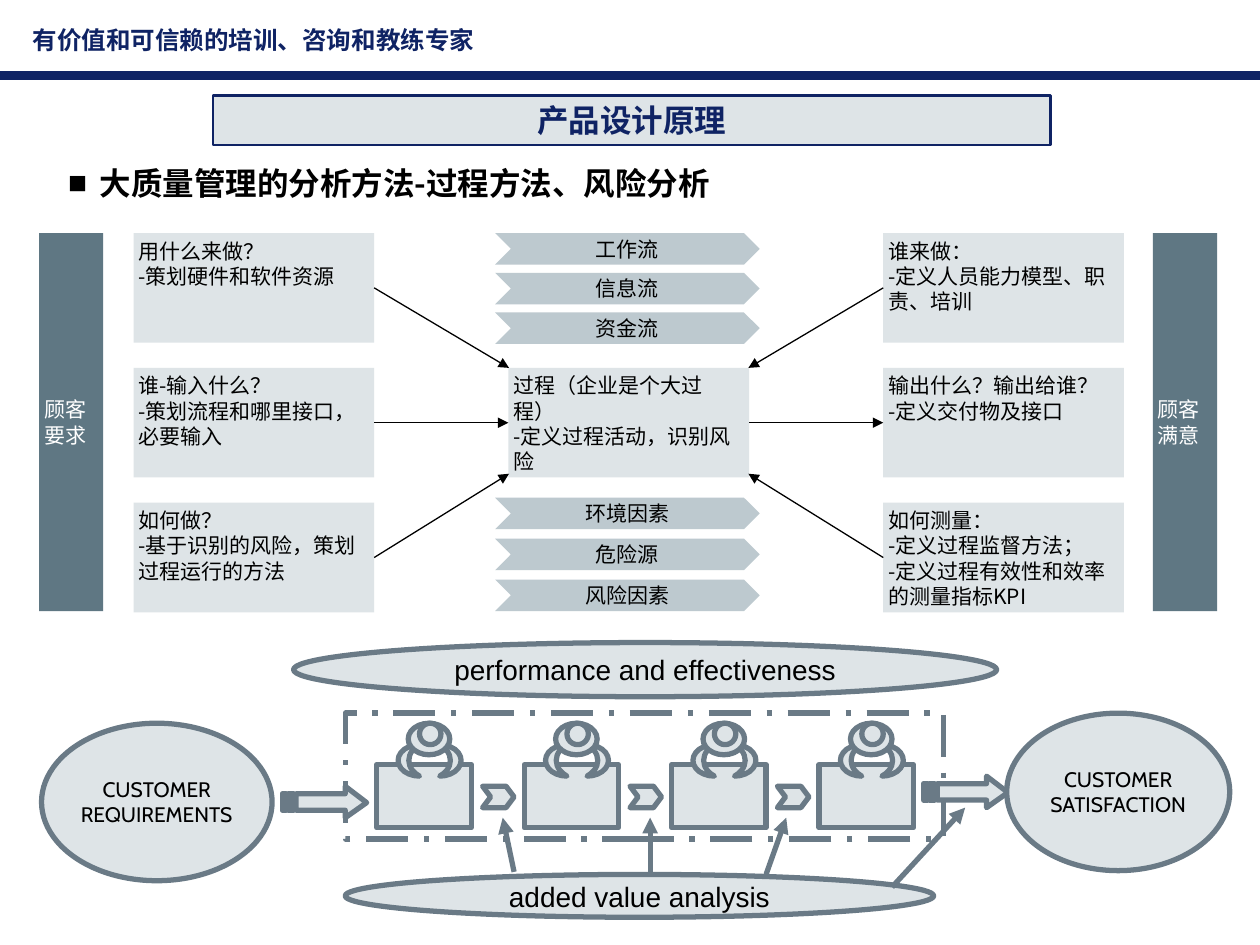
from dataclasses import dataclass
from typing import Optional

from lxml.etree import SubElement
from pptx import Presentation
from pptx.dml.color import RGBColor
from pptx.enum.dml import MSO_LINE
from pptx.enum.shapes import MSO_CONNECTOR, MSO_SHAPE
from pptx.enum.text import MSO_ANCHOR, MSO_AUTO_SIZE, PP_ALIGN
from pptx.oxml.ns import qn
from pptx.util import Inches, Pt

NAVY = RGBColor(0x0F, 0x23, 0x64)
PALE = RGBColor(0xDE, 0xE4, 0xE7)
GREY = RGBColor(0x6A, 0x7A, 0x86)
SLATE = RGBColor(0x5F, 0x77, 0x83)
SILVER = RGBColor(0xBD, 0xC9, 0xCF)
BLACK = RGBColor(0, 0, 0)
WHITE = RGBColor(255, 255, 255)
CJK = "Noto Sans CJK SC"


@dataclass
class TextStyle:
    font: str = CJK
    size: int = 12
    color: RGBColor = BLACK
    bold: bool = False
    align: PP_ALIGN = PP_ALIGN.LEFT
    anchor: MSO_ANCHOR = MSO_ANCHOR.TOP
    inset: Optional[float] = 0.04
    wrap: bool = True


@dataclass
class Cell:
    column: int
    row: int
    text: str


def write(shape, text: str, style: TextStyle) -> None:
    frame = shape.text_frame
    frame.text = text
    frame.word_wrap = style.wrap
    frame.auto_size = MSO_AUTO_SIZE.NONE
    frame.vertical_anchor = style.anchor
    if style.inset is not None:
        frame.margin_left = frame.margin_right = Inches(style.inset)
        frame.margin_top = frame.margin_bottom = Inches(style.inset)
    for para in frame.paragraphs:
        para.alignment = style.align
        para.space_before = Pt(0)
        for span in para.runs:
            font = span.font
            font.name, font.size, font.bold = style.font, Pt(style.size), style.bold
            font.color.rgb = style.color
            east_asian = SubElement(font._element, qn("a:ea"))
            east_asian.set("typeface", CJK)


def place(shape, left: float, top: float, width: float, height: float) -> None:
    shape.left, shape.top = Inches(left), Inches(top)
    shape.width, shape.height = Inches(width), Inches(height)


def paint(shape, fill: Optional[RGBColor], line: Optional[RGBColor], weight: float = 3) -> None:
    if fill is None:
        shape.fill.background()
    else:
        shape.fill.solid()
        shape.fill.fore_color.rgb = fill
    if line is None:
        shape.line.fill.background()
    else:
        shape.line.color.rgb = line
        shape.line.width = Pt(weight)


def add_block(kind: MSO_SHAPE, left: float, top: float, width: float, height: float,
              fill: Optional[RGBColor] = PALE, line: Optional[RGBColor] = GREY,
              adjust: Optional[float] = None):
    shape = page.shapes.add_shape(kind, Inches(left), Inches(top), Inches(width), Inches(height))
    shape.shadow.inherit = False
    if adjust is not None:
        shape.adjustments[0] = adjust
    paint(shape, fill, line)
    return shape


def add_line(start: tuple, end: tuple, color: RGBColor, weight: float, arrow: bool = True):
    points = [Inches(value) for value in (*start, *end)]
    line = page.shapes.add_connector(MSO_CONNECTOR.STRAIGHT, *points)
    line.line.color.rgb = color
    line.line.width = Pt(weight)
    properties = line._element.spPr
    if arrow:
        SubElement(properties.find(qn("a:ln")), qn("a:tailEnd")).set("type", "triangle")
    SubElement(properties, qn("a:effectLst"))
    return line


def add_striped_arrow(left: float, top: float) -> None:
    def scaled(points: list) -> list:
        return [(Inches(left + x), Inches(top + y)) for x, y in points]

    head = scaled([(0.5, 0), (0.5, 0.06), (0.11, 0.06), (0.11, 0.19),
                   (0.5, 0.19), (0.5, 0.25), (0.67, 0.13)])
    builder = page.shapes.build_freeform(*head[0])
    builder.add_line_segments(head[1:], close=True)
    for x1, x2 in ((0.05, 0.09), (0, 0.03)):
        stripe = scaled([(x1, 0.06), (x1, 0.19), (x2, 0.19), (x2, 0.06)])
        builder.move_to(*stripe[0])
        builder.add_line_segments(stripe[1:], close=True)
    shape = builder.convert_to_shape()
    shape.shadow.inherit = False
    paint(shape, PALE, GREY)


def add_worker(left: float) -> None:
    add_block(MSO_SHAPE.MOON, left, 5.91, 0.17, 0.25, adjust=0.5)
    arm = add_block(MSO_SHAPE.MOON, left + 0.33, 5.91, 0.17, 0.25, adjust=0.5)
    arm._element.spPr.xfrm.set("flipH", "1")
    add_block(MSO_SHAPE.OVAL, left + 0.08, 5.74, 0.33, 0.25)
    add_block(MSO_SHAPE.OVAL, left + 0.17, 5.74, 0.17, 0.17)


deck = Presentation()
deck.slide_width, deck.slide_height = Inches(10), Inches(7.5)
page = deck.slides.add_slide(deck.slide_layouts[1])

# Header band
add_line((0, 0.6), (10, 0.6), NAVY, 5, arrow=False)
header = page.shapes.add_textbox(Inches(0.16), Inches(0.15), Inches(3.74), Inches(0.34))
write(header, "有价值和可信赖的培训、咨询和教练专家",
      TextStyle("Arial", 14, NAVY, True, inset=None, wrap=False))

# Title in a rounded frame
title = page.shapes.title
place(title, 1.69, 0.76, 6.65, 0.39)
geometry = SubElement(title._element.spPr, qn("a:prstGeom"), prst="roundRect")
SubElement(geometry, qn("a:avLst"))
paint(title, PALE, NAVY, 1.5)
write(title, "产品设计原理", TextStyle(CJK, 18, NAVY, True, PP_ALIGN.CENTER, MSO_ANCHOR.MIDDLE))

# Bulleted heading
body = page.placeholders[1]
place(body, 0.54, 1.3, 7.04, 0.3)
write(body, "大质量管理的分析方法-过程方法、风险分析", TextStyle(size=18, bold=True, inset=0))
bullet = body.text_frame.paragraphs[0]._p.get_or_add_pPr()
bullet.set("marL", str(Inches(0.25)))
bullet.set("indent", str(-Inches(0.25)))
SubElement(bullet, qn("a:buChar"), char="■")

# Desks, frame, arrows and workers
WORKER_PITCH = 1.17
for index in range(4):
    add_block(MSO_SHAPE.RECTANGLE, 2.99 + index * WORKER_PITCH, 6.07, 0.75, 0.5)
frame_box = add_block(MSO_SHAPE.RECTANGLE, 2.74, 5.66, 4.75, 1, fill=None)
frame_box.line.dash_style = MSO_LINE.LONG_DASH_DOT
add_striped_arrow(2.24, 6.24)
add_striped_arrow(7.33, 6.16)
for index in range(3):
    add_block(MSO_SHAPE.CHEVRON, 3.83 + index * WORKER_PITCH, 6.24, 0.25, 0.17, adjust=0.375)
for index in range(4):
    add_worker(3.16 + index * WORKER_PITCH)

# Ellipses and value arrows
ELLIPSES = [
    (0.33, 5.74, 1.83, 1.25, "CUSTOMER\nREQUIREMENTS", "Cabin", 12),
    (7.99, 5.66, 1.77, 1.25, "CUSTOMER\nSATISFACTION", "Cabin", 12),
    (2.74, 6.94, 4.67, 0.34, "added value analysis", "Arial", 16),
    (2.33, 5.1, 5.58, 0.43, "performance and effectiveness", "Arial", 16),
]
for left, top, width, height, text, font, size in ELLIPSES:
    write(add_block(MSO_SHAPE.OVAL, left, top, width, height), text,
          TextStyle(font, size, align=PP_ALIGN.CENTER, anchor=MSO_ANCHOR.MIDDLE,
                    inset=None, wrap=False))
for start, end in [((4.08, 6.92), (3.99, 6.49)), ((5.16, 6.92), (5.16, 6.49)),
                   ((6.08, 6.94), (6.24, 6.49)), ((7.08, 7.04), (7.66, 6.41))]:
    add_line(start, end, GREY, 3)

# Process boxes on a three by three grid
CELLS = [
    Cell(0, 0, "用什么来做？\n-策划硬件和软件资源"),
    Cell(0, 1, "谁-输入什么？\n-策划流程和哪里接口，必要输入"),
    Cell(0, 2, "如何做？\n-基于识别的风险，策划过程运行的方法"),
    Cell(1, 1, "过程（企业是个大过程）\n-定义过程活动，识别风险"),
    Cell(2, 0, "谁来做：\n-定义人员能力模型、职责、培训"),
    Cell(2, 1, "输出什么？输出给谁？\n-定义交付物及接口"),
    Cell(2, 2, "如何测量：\n-定义过程监督方法；\n-定义过程有效性和效率的测量指标KPI"),
]
boxes = {}
for cell in CELLS:
    box = add_block(MSO_SHAPE.RECTANGLE, 1.06 + cell.column * 2.975, 1.85 + cell.row * 1.07,
                    1.91, 0.87, line=None)
    write(box, cell.text, TextStyle())
    boxes[cell.column, cell.row] = box
for left, text in ((0.31, "顾客要求"), (9.15, "顾客满意")):
    pillar = add_block(MSO_SHAPE.RECTANGLE, left, 1.85, 0.51, 3, SLATE, None)
    write(pillar, text, TextStyle(color=WHITE, anchor=MSO_ANCHOR.MIDDLE))

# Arrows between the boxes
for source, target in (((0, 1), (1, 1)), ((1, 1), (2, 1))):
    link = add_line((2.97, 3.35), (4.03, 3.35), BLACK, 0.75)
    link.begin_connect(boxes[source], 3)
    link.end_connect(boxes[target], 1)
for column, side, start_x, end_x in ((0, 3, 2.97, 4.04), (2, 1, 7.01, 5.94)):
    for row, start_y, end_y in ((0, 2.28, 2.92), (2, 4.42, 3.76)):
        link = add_line((start_x, start_y), (end_x, end_y), BLACK, 0.75)
        link.begin_connect(boxes[column, row], side)

# Flows above and factors below the process
for top, pitch, labels in ((1.85, 0.315, ("工作流", "信息流", "资金流")),
                           (3.95, 0.325, ("环境因素", "危险源", "风险因素"))):
    for index, label in enumerate(labels):
        flow = add_block(MSO_SHAPE.CHEVRON, 3.93, top + index * pitch, 2.1, 0.25, SILVER, None)
        write(flow, label, TextStyle(align=PP_ALIGN.CENTER, anchor=MSO_ANCHOR.MIDDLE, inset=None))

deck.save("out.pptx")
